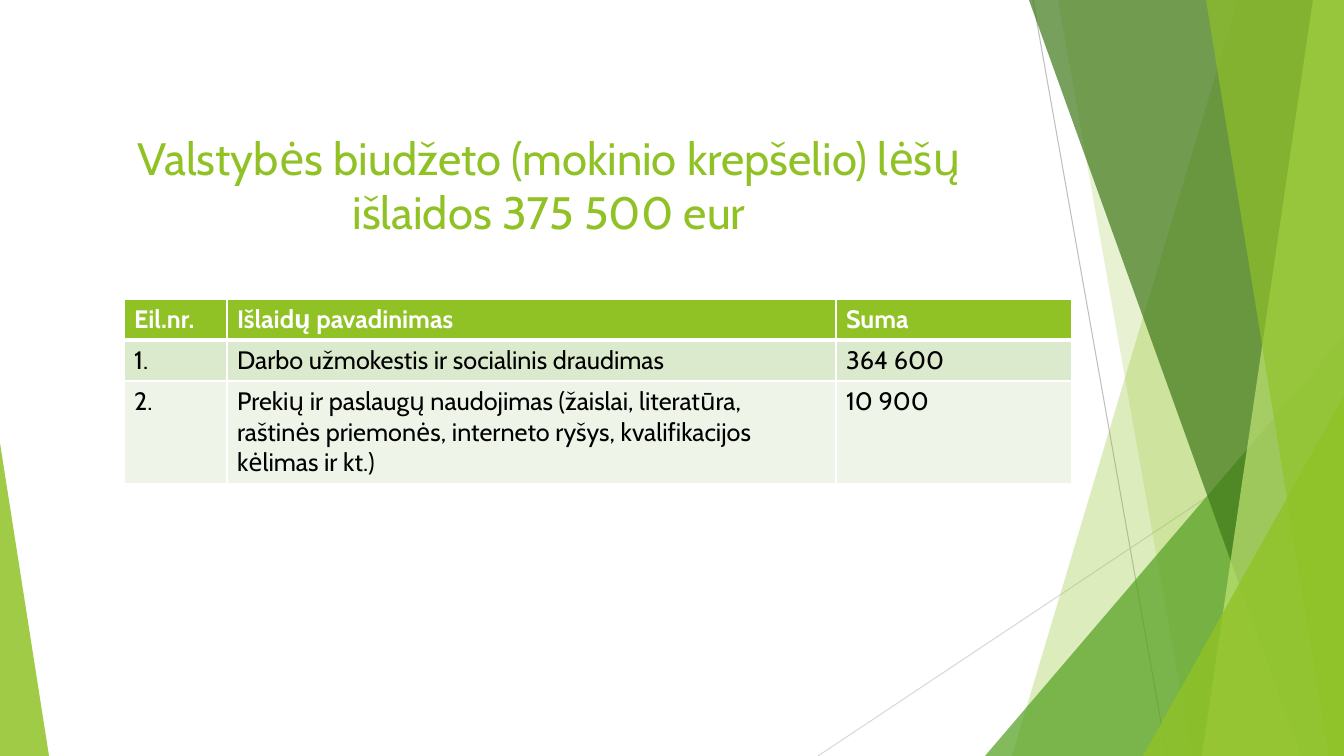
"""Builds the budget expenses slide with its faceted green backdrop."""
from typing import NamedTuple

from lxml.etree import SubElement
from pptx import Presentation
from pptx.dml.color import RGBColor
from pptx.enum.shapes import MSO_CONNECTOR as Connector, MSO_SHAPE as Shape
from pptx.enum.text import MSO_ANCHOR as Anchor, MSO_AUTO_SIZE as AutoSize, PP_ALIGN as Align
from pptx.oxml.ns import qn
from pptx.util import Pt

SCALE = 12192000 / 1344
WIDTH, HEIGHT = 1344, 756
FONT = "Cabin"
WHITE = RGBColor(0xFF, 0xFF, 0xFF)
BLACK = RGBColor(0x00, 0x00, 0x00)
LIME = RGBColor(0x90, 0xC2, 0x26)
PALE_LIME = RGBColor(0xC0, 0xE4, 0x74)
GREEN = RGBColor(0x54, 0xA0, 0x21)
DARK_GREEN = RGBColor(0x3F, 0x78, 0x19)
GRAY = RGBColor(0xBF, 0xBF, 0xBF)
LIGHT_GRAY = RGBColor(0xD9, 0xD9, 0xD9)
BAND = RGBColor(0xDB, 0xE9, 0xCD)
LIGHT_BAND = RGBColor(0xEE, 0xF4, 0xE8)


class Ray(NamedTuple):
    start: tuple[int, int]
    end: tuple[int, int]
    color: RGBColor


class Facet(NamedTuple):
    top_left: int
    bottom_left: int
    color: RGBColor
    opacity: int


class Corner(NamedTuple):
    left: int
    top: int
    width: int
    apex: int
    color: RGBColor
    opacity: int


class Row(NamedTuple):
    height: int
    fill: RGBColor
    color: RGBColor
    bold: bool
    texts: tuple[str, str, str]


RAYS = [
    Ray((1033, 0), (1167, HEIGHT), GRAY),
    Ray((WIDTH, 406), (818, HEIGHT), LIGHT_GRAY),
]
BACKDROP = [
    Facet(1238, 1012, LIME, 30),
    Facet(1058, 1192, LIME, 20),
    Corner(985, 336, 359, 1, GREEN, 72),
    Facet(1029, 1301, DARK_GREEN, 70),
    Facet(1313, 1202, PALE_LIME, 70),
    Facet(1206, 1329, LIME, 65),
    Corner(1143, 396, 201, 1, LIME, 80),
    Corner(0, 443, 49, 0, LIME, 85),
]
TITLE = "Valstybės biudžeto (mokinio krepšelio) lėšų išlaidos 375 500 eur"
COLUMNS = (103, 609, 236)
ROWS = [
    Row(41, LIME, WHITE, True, ("Eil.nr.", "Išlaidų pavadinimas", "Suma")),
    Row(41, BAND, BLACK, False,
        ("1.", "Darbo užmokestis ir socialinis draudimas", "364 600")),
    Row(101, LIGHT_BAND, BLACK, False,
        ("2.", "Prekių ir paslaugų naudojimas (žaislai, literatūra, raštinės priemonės, "
               "interneto ryšys, kvalifikacijos kėlimas ir kt.)", "10 900")),
]


def px(length: int) -> int:
    return round(length * SCALE)


def add_run(paragraph, text: str, size: float, color: RGBColor, bold: bool = False) -> None:
    run = paragraph.add_run()
    run.text = text
    run.font.name = FONT
    run.font.size = Pt(size)
    run.font.bold = bold
    run.font.color.rgb = color


def add_ray(slide, ray: Ray) -> None:
    connector = slide.shapes.add_connector(
        Connector.STRAIGHT, *map(px, ray.start + ray.end))
    connector.line.color.rgb = ray.color
    connector.line.width = Pt(0.75)
    SubElement(connector._element.spPr, qn("a:effectLst"))


def add_backdrop(slide, piece: Facet | Corner) -> None:
    if isinstance(piece, Facet):
        builder = slide.shapes.build_freeform(piece.top_left, 0, SCALE)
        builder.add_line_segments([(WIDTH, 0), (WIDTH, HEIGHT), (piece.bottom_left, HEIGHT)])
        shape = builder.convert_to_shape()
    else:
        shape = slide.shapes.add_shape(
            Shape.ISOSCELES_TRIANGLE, px(piece.left), px(piece.top),
            px(piece.width), px(HEIGHT - piece.top))
        shape.adjustments[0] = piece.apex
    shape.shadow.inherit = False
    shape.line.fill.background()
    shape.fill.solid()
    shape.fill.fore_color.rgb = piece.color
    color = shape._element.spPr.find(qn("a:solidFill")).find(qn("a:srgbClr"))
    SubElement(color, qn("a:alpha"), val=str(piece.opacity * 1000))


def format_title(slide) -> None:
    title = slide.shapes.title
    title.left, title.top, title.width, title.height = map(px, (75, 68, 948, 145))
    frame = title.text_frame
    frame.word_wrap = True
    frame.auto_size = AutoSize.NONE
    frame.vertical_anchor = Anchor.TOP
    frame.margin_top = px(62)
    paragraph = frame.paragraphs[0]
    paragraph.alignment = Align.CENTER
    add_run(paragraph, TITLE, 32.4, LIME)


def add_border(cell, side: str, width: float) -> None:
    line = SubElement(cell._tc.get_or_add_tcPr(), qn(f"a:ln{side}"), w=str(Pt(width)))
    SubElement(SubElement(line, qn("a:solidFill")), qn("a:srgbClr"), val=str(WHITE))


def add_expenses(slide) -> None:
    height = sum(row.height for row in ROWS)
    table = slide.shapes.add_table(
        len(ROWS), len(COLUMNS), px(124), px(299), px(sum(COLUMNS)), px(height)).table
    for column, width in zip(table.columns, COLUMNS):
        column.width = px(width)
    for index, row in enumerate(ROWS):
        table.rows[index].height = px(row.height)
        for cell, text in zip(table.rows[index].cells, row.texts):
            for side in "LRTB":
                thick = (index, side) in ((0, "B"), (1, "T"))
                add_border(cell, side, 3 if thick else 1)
            cell.fill.solid()
            cell.fill.fore_color.rgb = row.fill
            add_run(cell.text_frame.paragraphs[0], text, 18, row.color, row.bold)


def main() -> None:
    presentation = Presentation()
    presentation.slide_width, presentation.slide_height = px(WIDTH), px(HEIGHT)
    slide = presentation.slides.add_slide(presentation.slide_layouts[5])
    for ray in RAYS:
        add_ray(slide, ray)
    for piece in BACKDROP:
        add_backdrop(slide, piece)
    format_title(slide)
    add_expenses(slide)
    presentation.save("out.pptx")


if __name__ == "__main__":
    main()
